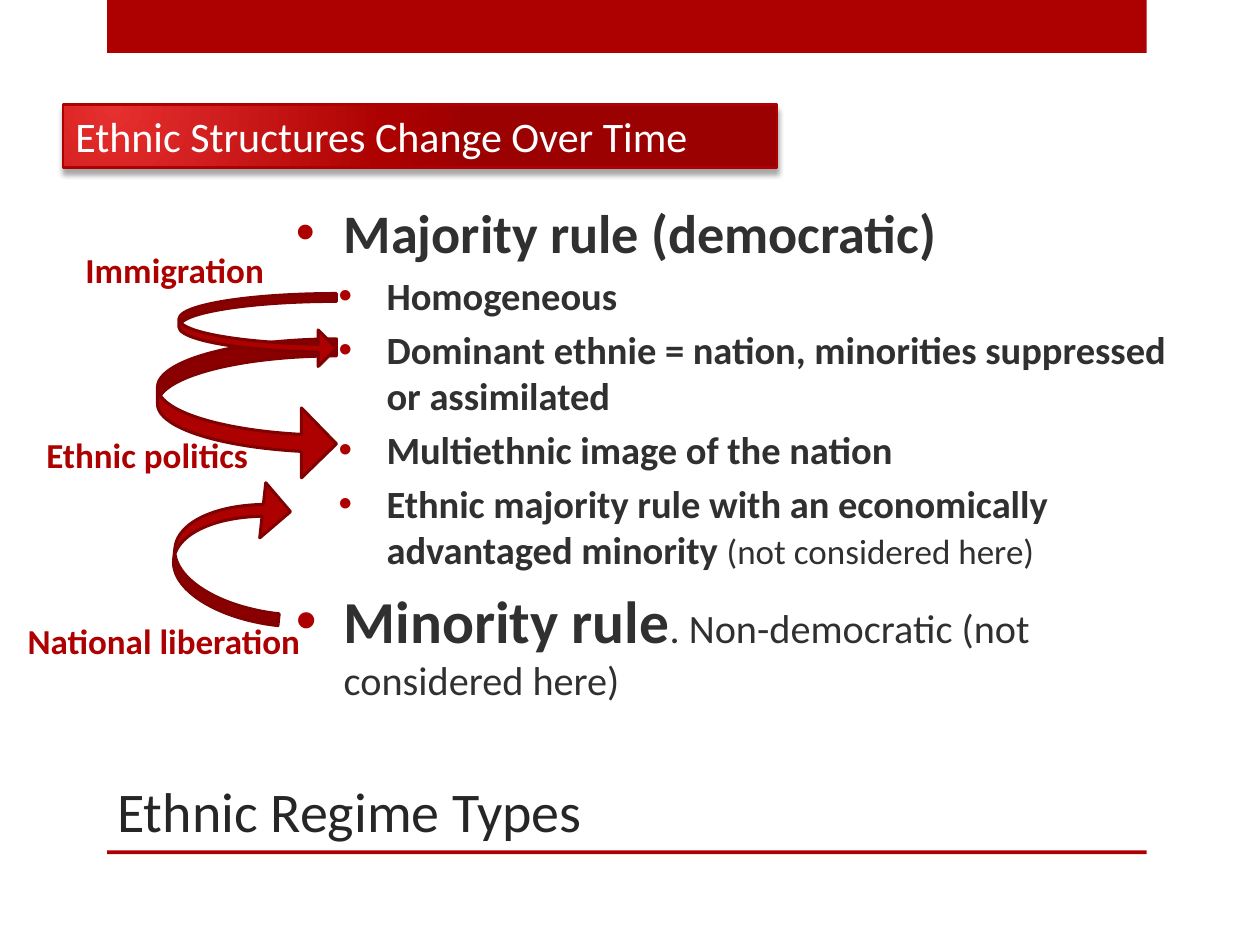
import pptx
import pptx.util
import pptx.oxml
import pptx.oxml.ns
import pptx.dml.color
import pptx.enum.shapes
import pptx.enum.text

Inches = pptx.util.Inches
Pt = pptx.util.Pt
SHAPE = pptx.enum.shapes.MSO_SHAPE
ANCHOR = pptx.enum.text.MSO_ANCHOR
ALIGN = pptx.enum.text.PP_ALIGN
AUTOFIT = pptx.enum.text.MSO_AUTO_SIZE
qn = pptx.oxml.ns.qn

RED, DARK_RED, WHITE = "AD0101", "800101", "FFFFFF"
TITLE_INK, BODY_INK = "262626", "303030"


def rgb(value):
    return pptx.dml.color.RGBColor.from_string(value)


def element(xml):
    """Parse a drawing element, adding its namespace to the root tag."""
    tag, rest = xml.split(" ", 1)
    return pptx.oxml.parse_xml(f"{tag} {pptx.oxml.ns.nsdecls('a')} {rest}")


def add_text(paragraph, text, size=20, color=RED, bold=False, font="Calibri"):
    run = paragraph.add_run()
    run.text = text
    run.font.name = font
    run.font.size = Pt(size)
    run.font.bold = bold
    run.font.color.rgb = rgb(color)


class SlideBuilder:
    def __init__(self, slide):
        self.slide = slide

    def shape(self, kind, box, line=None, line_width=1.0):
        shape = self.slide.shapes.add_shape(kind, *map(Inches, box))
        shape.shadow.inherit = False
        shape.fill.solid()
        shape.fill.fore_color.rgb = rgb(RED)
        if line:
            shape.line.color.rgb = rgb(line)
            shape.line.width = Pt(line_width)
        else:
            shape.line.fill.background()
        return shape

    def title(self, text, box):
        title = self.slide.shapes.title
        title.left, title.top, title.width, title.height = map(Inches, box)
        frame = title.text_frame
        frame.vertical_anchor = ANCHOR.BOTTOM
        frame.paragraphs[0].alignment = ALIGN.LEFT
        add_text(frame.paragraphs[0], text, size=32, color=TITLE_INK)

    def arrow(self, kind, box, thickness, rotation=0):
        arrow = self.shape(kind, box, DARK_RED, 1.75)
        arrow.adjustments[0] = thickness
        arrow.adjustments[1] = 0.5
        arrow.adjustments[2] = 0.25
        arrow.rotation = rotation

    def label(self, text, box):
        frame = self.slide.shapes.add_textbox(*map(Inches, box)).text_frame
        frame.word_wrap = False
        frame.auto_size = AUTOFIT.SHAPE_TO_FIT_TEXT
        add_text(frame.paragraphs[0], text, bold=True)

    def banner(self, text, box):
        """Heading bar with a radial gradient and a soft shadow below."""
        banner = self.shape(SHAPE.RECTANGLE, box, RED, 1.25)
        properties = banner.fill._xPr
        stops = "".join(
            f'<a:gs pos="{position * 1000}"><a:srgbClr val="{color}"/></a:gs>'
            for position, color in ((0, "E62F2F"), (76, RED), (100, "9C0101")))
        properties.replace(properties.find(qn("a:solidFill")), element(
            f'<a:gradFill rotWithShape="1"><a:gsLst>{stops}</a:gsLst>'
            '<a:path path="circle"><a:fillToRect l="15000" t="15000" '
            'r="100000" b="100000"/></a:path></a:gradFill>'))
        properties.find(qn("a:effectLst")).append(element(
            f'<a:outerShdw blurRad="{Pt(3)}" dist="{Pt(3)}" dir="5400000" '
            'rotWithShape="0"><a:srgbClr val="000000">'
            '<a:alpha val="35000"/></a:srgbClr></a:outerShdw>'))
        frame = banner.text_frame
        frame.word_wrap = True
        frame.auto_size = AUTOFIT.SHAPE_TO_FIT_TEXT
        frame.vertical_anchor = ANCHOR.TOP
        frame.paragraphs[0].alignment = ALIGN.LEFT
        add_text(frame.paragraphs[0], text, size=24, color=WHITE)

    def bullets(self, items, box):
        """Each item is a level and its runs of (text, size, bold)."""
        frame = self.slide.shapes.add_textbox(*map(Inches, box)).text_frame
        frame.word_wrap = True
        frame.vertical_anchor = ANCHOR.MIDDLE
        for index, (level, runs) in enumerate(items):
            paragraph = frame.paragraphs[0] if index == 0 else frame.add_paragraph()
            paragraph.level = level
            if index:
                paragraph.space_before = Pt(round(0.2 * runs[0][1], 1))
            properties = paragraph._p.get_or_add_pPr()
            properties.set("marL", str(Inches((0.38, 0.72)[level])))
            properties.set("indent", str(Inches(-0.38)))
            properties.append(element(
                f'<a:buClr ><a:srgbClr val="{RED}"/></a:buClr>'))
            properties.append(element('<a:buFont typeface="Arial"/>'))
            properties.append(element('<a:buChar char="•"/>'))
            for text, size, bold in runs:
                add_text(paragraph, text, size=size, color=BODY_INK, bold=bold)


def main():
    presentation = pptx.Presentation()
    presentation.slide_width = Inches(10)
    presentation.slide_height = Inches(7.5)
    builder = SlideBuilder(
        presentation.slides.add_slide(presentation.slide_layouts[5]))

    for top, height in ((0, 0.42), (6.75, 0.03)):
        builder.shape(SHAPE.RECTANGLE, (0.85, top, 8.25, height))
    builder.title("Ethnic Regime Types", (0.83, 5.75, 7.42, 1))

    builder.bullets([
        (0, [("Majority rule (democratic)", 31, True)]),
        (1, [("Homogeneous", 22, True)]),
        (1, [("Dominant ethnie = nation, minorities suppressed or assimilated",
              22, True)]),
        (1, [("Multiethnic image of the nation", 22, True)]),
        (1, [("Ethnic majority rule with an economically advantaged minority ",
              22, True), ("(not considered here)", 20, False)]),
        (0, [("Minority rule", 34, True),
             (". Non-democratic (not considered here)", 23, False)]),
    ], (2.25, 1.25, 7.17, 4.67))

    builder.arrow(SHAPE.CURVED_LEFT_ARROW, (1.39, 3.79, 0.88, 1.13), 0.107, 186.3)
    builder.arrow(SHAPE.CURVED_RIGHT_ARROW, (1.25, 2.69, 1.42, 1.11), 0.121)
    builder.arrow(SHAPE.CURVED_RIGHT_ARROW, (1.42, 2.33, 1.25, 0.58), 0.107)

    builder.banner("Ethnic Structures Change Over Time", (0.5, 0.83, 5.67, 0.5))

    builder.label("Immigration", (0.58, 1.92, 1.63, 0.44))
    builder.label("Ethnic politics", (0.27, 3.39, 1.81, 0.44))
    builder.label("National liberation", (0.12, 4.87, 2.38, 0.44))

    presentation.save("out.pptx")


if __name__ == "__main__":
    main()
